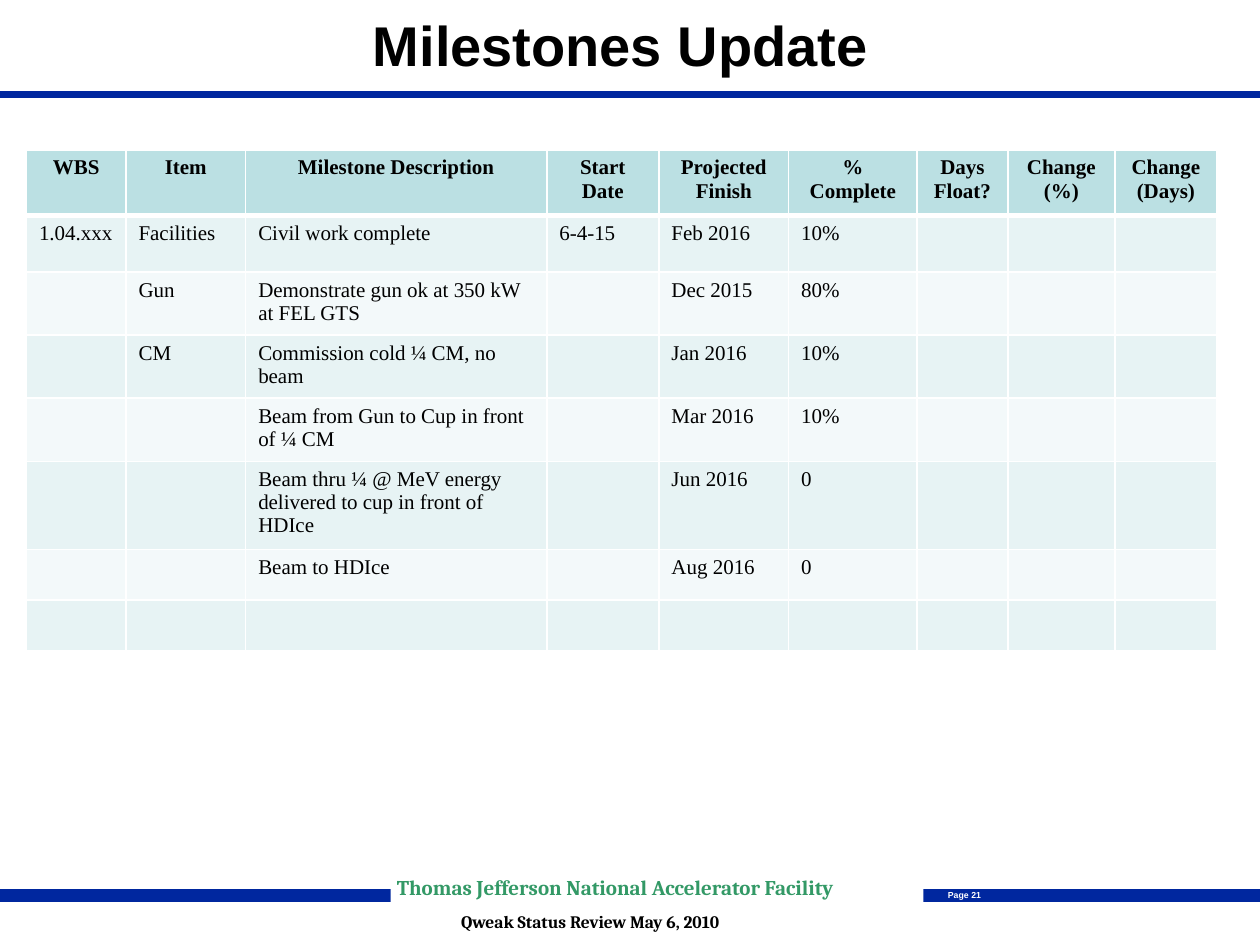
from lxml.etree import SubElement
from pptx import Presentation
from pptx.dml.color import RGBColor
from pptx.enum.shapes import MSO_CONNECTOR, MSO_SHAPE
from pptx.enum.text import MSO_ANCHOR, PP_ALIGN
from pptx.oxml.ns import qn
from pptx.util import Inches, Pt

WIDTHS = [0.79, 0.95, 2.39, 0.89, 1.03, 1.02, 0.72, 0.85, 0.81]
HEIGHTS = [0.52, 0.45] + [0.4] * 6
ROWS = [
    ["WBS", "Item", "Milestone Description", "Start Date", "Projected Finish",
     "% Complete", "Days Float?", "Change (%)", "Change (Days)"],
    ["1.04.xxx", "Facilities", "Civil work complete", "6-4-15", "Feb 2016", "10%"],
    ["", "Gun", "Demonstrate gun ok at 350 kW at FEL GTS", "", "Dec 2015", "80%"],
    ["", "CM", "Commission cold ¼ CM, no beam", "", "Jan 2016", "10%"],
    ["", "", "Beam from Gun to Cup in front of ¼ CM", "", "Mar 2016", "10%"],
    ["", "", "Beam thru ¼ @ MeV energy delivered to cup in front of HDIce",
     "", "Jun 2016", "0"],
    ["", "", "Beam to HDIce", "", "Aug 2016", "0"],
    [],
]


def color(code):
    return RGBColor.from_string(code)


def paint(shape, code):
    shape.fill.solid()
    shape.fill.fore_color.rgb = color(code)


def style(para, face, size, code="000000", bold=True, align=PP_ALIGN.LEFT):
    para.alignment = align
    font = para.font
    font.name, font.size, font.bold = face, Pt(size), bold
    font.color.rgb = color(code)


def add_rule(slide, top, width):
    line = slide.shapes.add_connector(
        MSO_CONNECTOR.STRAIGHT, Inches(0), Inches(top), Inches(10), Inches(top))
    line.line.color.rgb = color("00279F")
    line.line.width = Pt(width)
    SubElement(line._element.spPr, qn("a:effectLst"))


def add_label(slide, text, box, size, code, inset=0):
    shape = slide.shapes.add_shape(MSO_SHAPE.RECTANGLE, *map(Inches, box))
    shape.shadow.inherit = False
    paint(shape, "FFFFFF")
    shape.line.fill.background()
    frame = shape.text_frame
    frame.word_wrap = True
    frame.vertical_anchor = MSO_ANCHOR.TOP
    frame.margin_left = Inches(inset)
    frame.margin_top = frame.margin_right = frame.margin_bottom = 0
    para = frame.paragraphs[0]
    para.text = text
    para.line_spacing = 0.8
    style(para, "Cambria", size, code)


def add_page(slide):
    box = slide.shapes.add_textbox(
        Inches(7.42), Inches(7.01), Inches(0.47), Inches(0.18))
    box.text_frame.word_wrap = False
    para = box.text_frame.paragraphs[0]
    para.text = "Page 21"
    style(para, "Arial", 5, "FFFFFF", align=PP_ALIGN.CENTER)


def add_title(slide):
    title = slide.shapes.title
    title.left, title.top = Inches(0.45), Inches(0)
    title.width, title.height = Inches(8.95), Inches(0.7)
    title.text_frame.vertical_anchor = MSO_ANCHOR.MIDDLE
    para = title.text_frame.paragraphs[0]
    para.text = "Milestones Update"
    style(para, "Arial", 32, align=PP_ALIGN.CENTER)


def set_edges(cell, top, base):
    props = cell._tc.get_or_add_tcPr()
    for side, width in zip("LRTB", (1, 1, top, base)):
        edge = SubElement(props, qn(f"a:ln{side}"), w=str(Pt(width)))
        fill = SubElement(edge, qn("a:solidFill"))
        SubElement(fill, qn("a:srgbClr"), val="FFFFFF")


def fill_cell(cell, text, row):
    head = row == 0
    set_edges(cell, 3 if row == 1 else 1, 3 if head else 1)
    paint(cell, "BBE0E3" if head else "E7F3F4" if row % 2 else "F3F9FA")
    para = cell.text_frame.paragraphs[0]
    para.text = text
    style(para, "Times New Roman", 12, bold=head,
          align=PP_ALIGN.CENTER if head else PP_ALIGN.LEFT)


def add_grid(slide):
    frame = slide.shapes.add_table(
        len(ROWS), len(WIDTHS), Inches(0.21), Inches(1.19),
        Inches(sum(WIDTHS)), Inches(sum(HEIGHTS)))
    table = frame.table
    for col, width in zip(table.columns, WIDTHS):
        col.width = Inches(width)
    for row, (texts, height) in enumerate(zip(ROWS, HEIGHTS)):
        table.rows[row].height = Inches(height)
        for col in range(len(WIDTHS)):
            text = texts[col] if col < len(texts) else ""
            fill_cell(table.cell(row, col), text, row)


def main():
    deck = Presentation()
    deck.slide_width, deck.slide_height = Inches(10), Inches(7.5)
    slide = deck.slides.add_slide(deck.slide_layouts[5])
    add_rule(slide, 0.75, 4.5)
    add_rule(slide, 7.11, 7.25)
    add_label(slide, "Thomas Jefferson National Accelerator Facility",
              (3.1, 6.98, 4.23, 0.19), 12, "339966", 0.05)
    add_page(slide)
    add_label(slide, "Qweak Status Review May 6, 2010",
              (3.66, 7.26, 2.97, 0.14), 10, "000000")
    add_title(slide)
    add_grid(slide)
    deck.save("out.pptx")


if __name__ == "__main__":
    main()
